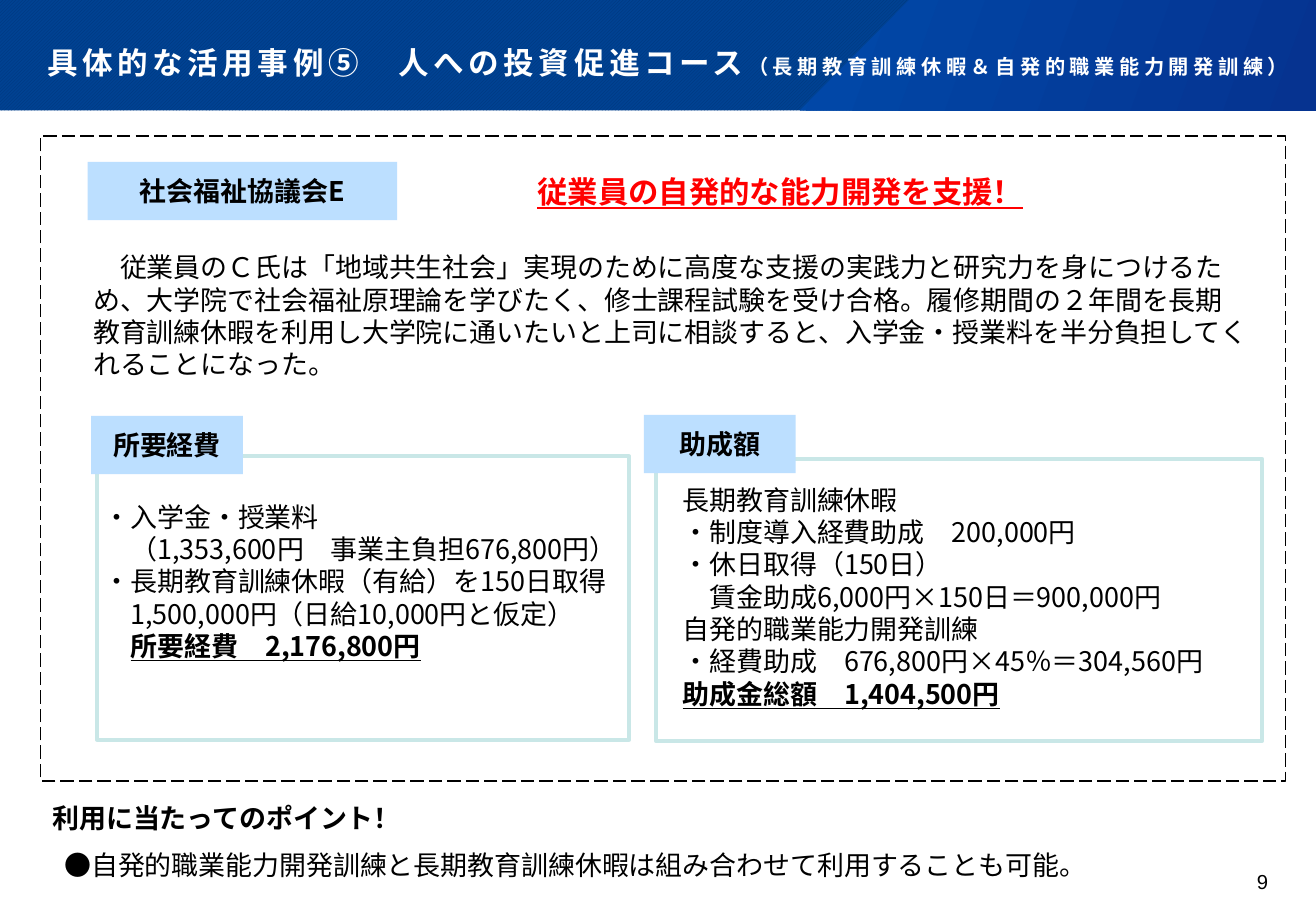
from dataclasses import dataclass

from lxml import etree
from pptx import Presentation
from pptx.dml.color import RGBColor
from pptx.enum.dml import MSO_LINE, MSO_PATTERN
from pptx.enum.shapes import MSO_SHAPE
from pptx.enum.text import MSO_ANCHOR, MSO_AUTO_SIZE, PP_ALIGN
from pptx.oxml.ns import qn
from pptx.util import Pt

RECTANGLE = MSO_SHAPE.RECTANGLE
LONG_DASH = MSO_LINE.LONG_DASH
DIAGONAL = MSO_PATTERN.DARK_UPWARD_DIAGONAL
MIDDLE, BOTTOM, TOP = MSO_ANCHOR.MIDDLE, MSO_ANCHOR.BOTTOM, MSO_ANCHOR.TOP
LEFT, CENTER, RIGHT = PP_ALIGN.LEFT, PP_ALIGN.CENTER, PP_ALIGN.RIGHT
NO_FIT = MSO_AUTO_SIZE.NONE
TWO_CONTENT_LAYOUT = 3


@dataclass(frozen=True)
class Theme:
    body_font: str = "Noto Sans CJK JP"
    title_font: str = "Roboto"
    number_font: str = "Arial"
    title_size: float = 18.1
    headline_size: float = 18
    body_size: float = 16
    small_size: float = 12
    text: str = "000000"
    title: str = "FFFFFF"
    headline: str = "FF0000"
    label: str = "BCDFFF"
    frame: str = "C9E7E7"
    banner: tuple = ("003579", "004292")
    ribbon: tuple = ("0049A9", "063390")


class SlideBuilder:
    def __init__(self, slide, theme):
        self.slide = slide
        self.theme = theme

    def style_run(self, run, size=None, color=None, font=None, bold=False, underline=False):
        run.font.name = font or self.theme.body_font
        run.font.size = Pt(size or self.theme.body_size)
        run.font.color.rgb = RGBColor.from_string(color or self.theme.text)
        run.font.bold = bold
        run.font.underline = underline
        east_asian = etree.Element(qn("a:ea"), typeface=self.theme.body_font)
        run._r.rPr.find(qn("a:latin")).addnext(east_asian)

    def set_text(self, shape, text, align=LEFT, anchor=MIDDLE, **style):
        frame = shape.text_frame
        frame.text = text
        frame.word_wrap = True
        frame.auto_size = NO_FIT
        frame.vertical_anchor = anchor
        for paragraph in frame.paragraphs:
            paragraph.alignment = align
            for run in paragraph.runs:
                self.style_run(run, **style)

    def place(self, shape, box):
        shape.left, shape.top, shape.width, shape.height = map(Pt, box)

    def banner(self, box, ribbon_points):
        """Patterned band and slanted gradient, both behind the title."""
        band = self.rectangle(box)
        band.fill.patterned()
        band.fill.pattern = DIAGONAL
        fore, back = map(RGBColor.from_string, self.theme.banner)
        band.fill.fore_color.rgb, band.fill.back_color.rgb = fore, back

        start, *rest = [(Pt(x), Pt(y)) for x, y in ribbon_points]
        outline = self.slide.shapes.build_freeform(*start)
        outline.add_line_segments(rest, close=True)
        ribbon = outline.convert_to_shape()
        ribbon.shadow.inherit = False
        ribbon.line.fill.background()
        ribbon.fill.gradient()
        ribbon.fill.gradient_angle = 340
        for stop, color, position in zip(ribbon.fill.gradient_stops, self.theme.ribbon, (0, 1)):
            stop.color.rgb = RGBColor.from_string(color)
            stop.position = position
        for shape in (band, ribbon):
            self.slide.shapes.title.element.addprevious(shape.element)

    def title(self, box, main_text, detail):
        title = self.slide.shapes.title
        self.place(title, box)
        style = {"font": self.theme.title_font, "color": self.theme.title, "bold": True}
        self.set_text(title, main_text, anchor=BOTTOM, size=self.theme.title_size, **style)
        frame = title.text_frame
        frame.margin_left, frame.margin_right = Pt(28), Pt(8)
        frame.margin_top, frame.margin_bottom = Pt(26), Pt(10)
        paragraph = frame.paragraphs[0]
        paragraph.line_spacing = 0.9
        detail_run = paragraph.add_run()
        detail_run.text = detail
        self.style_run(detail_run, size=self.theme.small_size, **style)
        for run in paragraph.runs:
            run._r.rPr.set("spc", "270")

    def rectangle(self, box, fill=None, line=None, width=1, dash=None):
        shape = self.slide.shapes.add_shape(RECTANGLE, *map(Pt, box))
        shape.shadow.inherit = False
        if fill:
            shape.fill.solid()
            shape.fill.fore_color.rgb = RGBColor.from_string(fill)
        else:
            shape.fill.background()
        if line:
            shape.line.color.rgb = RGBColor.from_string(line)
            shape.line.width = Pt(width)
            shape.line.dash_style = dash
        else:
            shape.line.fill.background()
        return shape

    def label(self, box, text):
        shape = self.rectangle(box, fill=self.theme.label)
        self.set_text(shape, text, align=CENTER, bold=True)

    def text(self, box, text, **style):
        shape = self.slide.shapes.add_textbox(*map(Pt, box))
        self.set_text(shape, text, **style)
        return shape

    def amounts(self, index, box, lines, total, total_indent=0):
        """List in a body placeholder, closed by an emphasised total."""
        body = self.slide.placeholders[index]
        self.place(body, box)
        self.set_text(body, "\n".join([*lines, total]))
        paragraphs = body.text_frame.paragraphs
        for paragraph in paragraphs:
            paragraph.space_before = Pt(0)
            properties = paragraph._p.get_or_add_pPr()
            properties.set("marL", "0")
            properties.set("indent", "0")
            etree.SubElement(properties, qn("a:buNone"))
        paragraphs[-1]._p.pPr.set("marL", str(Pt(total_indent)))
        for run in paragraphs[-1].runs:
            run.font.bold = run.font.underline = True


def main():
    presentation = Presentation()
    presentation.slide_width, presentation.slide_height = Pt(780), Pt(540)
    layout = presentation.slide_layouts[TWO_CONTENT_LAYOUT]
    theme = Theme()
    builder = SlideBuilder(presentation.slides.add_slide(layout), theme)

    # Banner and title
    builder.banner((0, 0, 780, 65.5), [(539, 0), (780, 0), (780, 65.5), (474, 65.5)])
    builder.title((0, 12.2, 780, 46), "具体的な活用事例⑤　人への投資促進コース",
                  "（長期教育訓練休暇＆自発的職業能力開発訓練）")

    # Case description
    builder.rectangle((24, 80.5, 738, 382.3), line=theme.text, dash=LONG_DASH)
    builder.label((52, 96, 183.5, 34.5), "社会福祉協議会E")
    builder.text((235.5, 97, 454, 32.5), "従業員の自発的な能力開発を支援！", align=CENTER,
                 size=theme.headline_size, color=theme.headline, bold=True, underline=True)
    builder.text((48.2, 134, 700, 106),
                 "　従業員のＣ氏は「地域共生社会」実現のために高度な支援の実践力と研究力を"
                 "身につけるため、大学院で社会福祉原理論を学びたく、修士課程試験を受け合格。"
                 "履修期間の２年間を長期教育訓練休暇を利用し大学院に通いたいと上司に相談すると、"
                 "入学金・授業料を半分負担してくれることになった。")

    # Costs and subsidies
    for frame_box, label_box, heading in (
        ((57.5, 270.5, 315.5, 168), (54, 246.5, 90, 34.5), "所要経費"),
        ((388.7, 272, 359.5, 167.3), (381.6, 246, 90, 34.5), "助成額"),
    ):
        builder.rectangle(frame_box, line=theme.frame, width=2.25)
        builder.label(label_box, heading)
    builder.amounts(1, (54.2, 280, 321, 129), [
        "・入学金・授業料",
        "　（1,353,600円　事業主負担676,800円）",
        "・長期教育訓練休暇（有給）を150日取得",
        "　1,500,000円（日給10,000円と仮定）",
    ], "所要経費　2,176,800円", total_indent=16)
    builder.amounts(2, (397.4, 287, 350.8, 133), [
        "長期教育訓練休暇",
        "・制度導入経費助成　200,000円",
        "・休日取得（150日）",
        "　賃金助成6,000円×150日＝900,000円",
        "自発的職業能力開発訓練",
        "・経費助成　676,800円×45％＝304,560円",
    ], "助成金総額　1,404,500円")

    # Point to note and page number
    builder.text((24, 467.3, 244, 34.5), "利用に当たってのポイント！", bold=True)
    builder.text((31, 494, 695.5, 36.7),
                 "●自発的職業能力開発訓練と長期教育訓練休暇は組み合わせて利用することも可能。")
    number = builder.text((702, 515, 49.7, 21.6), "9", align=RIGHT, anchor=TOP,
                          size=theme.small_size, font=theme.number_font)
    frame = number.text_frame
    frame.margin_left = frame.margin_right = frame.margin_top = frame.margin_bottom = 0

    presentation.save("out.pptx")


if __name__ == "__main__":
    main()
